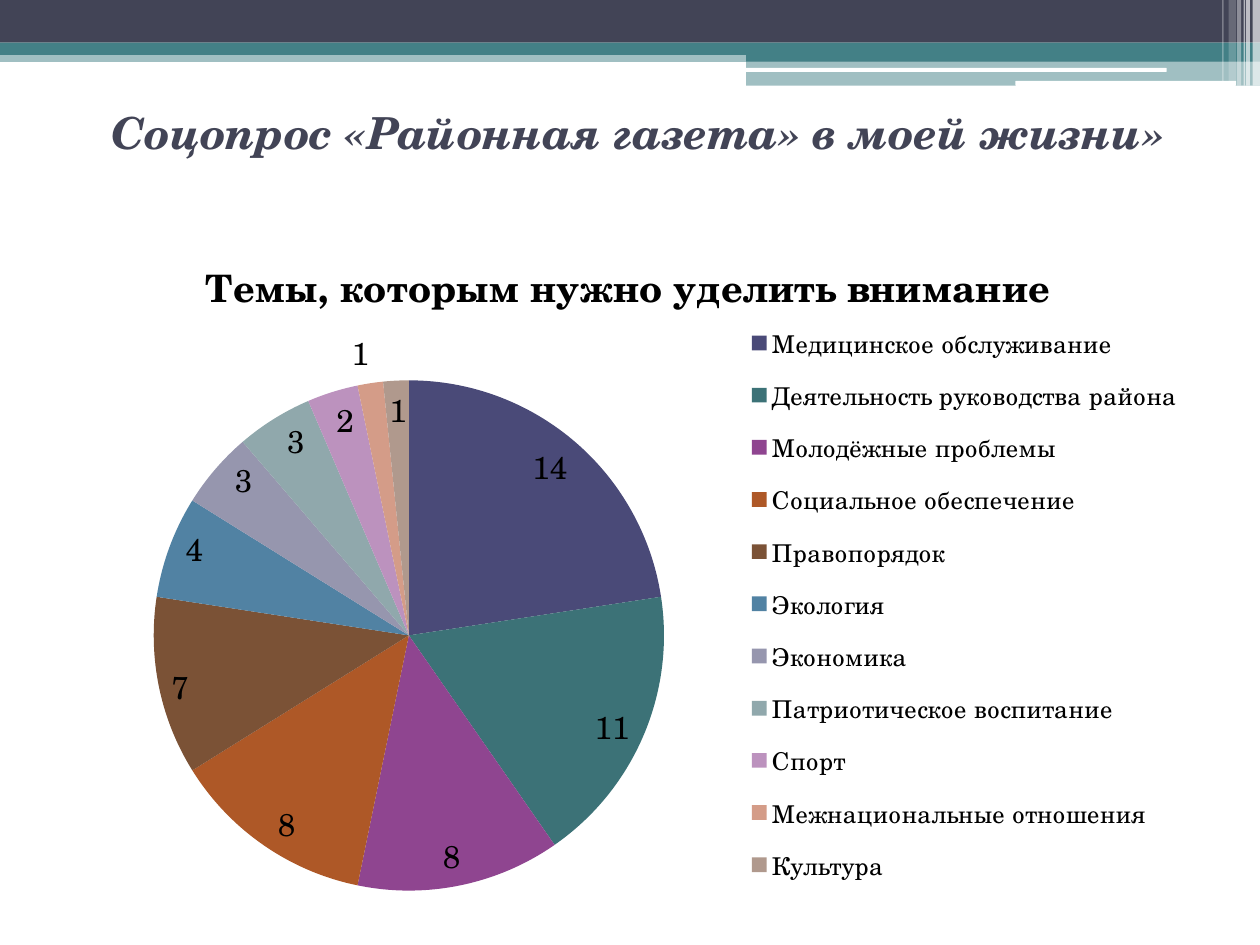
"""Build a survey slide with a pie chart of topics that need attention."""
from lxml import etree
from pptx import Presentation
from pptx.chart.data import CategoryChartData
from pptx.dml.color import RGBColor
from pptx.enum.chart import XL_CHART_TYPE, XL_LABEL_POSITION, XL_LEGEND_POSITION
from pptx.enum.shapes import MSO_SHAPE
from pptx.enum.text import MSO_ANCHOR, PP_ALIGN
from pptx.oxml.ns import qn
from pptx.util import Cm, Pt

PIE = XL_CHART_TYPE.PIE
FIT = XL_LABEL_POSITION.BEST_FIT
RIGHT = XL_LEGEND_POSITION.RIGHT
RECT, ROUND = MSO_SHAPE.RECTANGLE, MSO_SHAPE.ROUNDED_RECTANGLE
TOP, MID = MSO_ANCHOR.TOP, PP_ALIGN.CENTER

THEME = {
    "font": "TeX Gyre Schola",
    "ink": "000000", "navy": "424456", "teal": "438086", "white": "FFFFFF",
    "title": 25.2, "head": 21.6, "label": 18, "legend": 14,
}

TITLE = "Соцопрос «Районная газета» в моей жизни»"
HEAD = "Темы, которым нужно уделить внимание"
TOPICS = [
    ("Медицинское обслуживание", 14, "4A4A78"),
    ("Деятельность руководства района", 11, "3C7277"),
    ("Молодёжные проблемы", 8, "8F4590"),
    ("Социальное обеспечение", 8, "AE5827"),
    ("Правопорядок", 7, "7B5236"),
    ("Экология", 4, "5182A3"),
    ("Экономика", 3, "9696AE"),
    ("Патриотическое воспитание", 3, "90A8AC"),
    ("Спорт", 2, "BC92BE"),
    ("Межнациональные отношения", 1, "D49C88"),
    ("Культура", 1, "B0998D"),
]

WIDE, HIGH = 25.4, 19.05
STEP = 15.04
BANDS = [
    (0, 1.02, WIDE, 0.23, "teal", 50, RECT),
    (0, 0, WIDE, 0.86, "navy", 100, RECT),
    (0, 0.86, WIDE, 0.25, "teal", 100, RECT),
    (STEP, 0.99, WIDE - STEP, 0.25, "teal", 100, RECT),
    (STEP, 1.22, WIDE - STEP, 0.51, "teal", 50, RECT),
    (15.01, 1.37, 8.51, 0.08, "white", 100, ROUND),
    (20.47, 1.63, 4.45, 0.1, "white", 100, ROUND),
]
STRIPES = [
    (25.25, 0.15, 1.73, 65), (25.12, 0.08, 1.73, 65), (25.07, 0.03, 1.73, 60),
    (24.94, 0.08, 1.73, 40), (24.77, 0.15, 1.63, 20), (24.64, 0.03, 1.63, 30),
]


def tint(name):
    return RGBColor.from_string(THEME.get(name, name))


def style(font, size, color="ink", bold=False, italic=False):
    font.name, font.size = THEME["font"], Pt(THEME[size])
    font.bold, font.italic = bold, italic
    font.color.rgb = tint(color)


def write(frame, text, **form):
    para = frame.paragraphs[0]
    para.alignment = MID
    run = para.add_run()
    run.text = text
    style(run.font, **form)
    return para


def band(slide, left, top, wide, high, color, alpha, kind):
    shape = slide.shapes.add_shape(kind, Cm(left), Cm(top), Cm(wide), Cm(high))
    shape.shadow.inherit = False
    shape.line.fill.background()
    shape.fill.solid()
    shape.fill.fore_color.rgb = tint(color)
    if alpha < 100:
        node = shape.fill._xPr.find(".//" + qn("a:srgbClr"))
        etree.SubElement(node, qn("a:alpha")).set("val", str(alpha * 1000))


def place(node, index, inner=False, **spot):
    for old in node.findall(qn("c:layout")):
        node.remove(old)
    layout = etree.Element(qn("c:layout"))
    manual = etree.SubElement(layout, qn("c:manualLayout"))
    rules = {"layoutTarget": "inner"} if inner else {}
    rules.update(xMode="edge", yMode="edge", **spot)
    for name, value in rules.items():
        etree.SubElement(manual, qn("c:" + name)).set("val", str(value))
    node.insert(index, layout)


def head(slide):
    title = slide.shapes.title
    title.left, title.top = Cm(1.27), Cm(2.13)
    title.width, title.height = Cm(22.86), Cm(2.59)
    frame = title.text_frame
    frame.word_wrap = True
    frame.vertical_anchor = TOP
    frame.margin_top = 0
    para = write(frame, TITLE, size="title", color="navy", bold=True, italic=True)
    props = para._p.get_or_add_pPr()
    props.set("marL", str(Cm(1.73)))
    props.set("indent", str(Cm(-1.42)))


def pie(slide):
    data = CategoryChartData()
    data.categories = [name for name, _, _ in TOPICS]
    data.add_series(HEAD, [count for _, count, _ in TOPICS])
    chart = slide.shapes.add_chart(
        PIE, Cm(1.27), Cm(4.11), Cm(22.86), Cm(14.15), data).chart
    style(chart.font, "label")
    chart.has_title = True
    write(chart.chart_title.text_frame, HEAD, size="head", bold=True)
    chart.has_legend = True
    legend = chart.legend
    legend.position, legend.include_in_layout = RIGHT, False
    style(legend.font, "legend")
    plot = chart.plots[0]
    plot.vary_by_categories = True
    plot.has_data_labels = True
    labels = plot.data_labels
    labels.show_value, labels.show_percentage = True, False
    labels.position = FIT
    style(labels.font, "label")
    for index, (_, _, color) in enumerate(TOPICS):
        part = plot.series[0].points[index].format
        part.fill.solid()
        part.fill.fore_color.rgb = tint(color)
        part.line.fill.background()
    area = chart._chartSpace.find(".//" + qn("c:plotArea"))
    place(area, 0, inner=True, x=0.08, y=0.25, w=0.45, h=0.73)
    place(chart.chart_title._element, 1, x=0.12, y=0.06)
    place(legend._element, 1, x=0.6, y=0.15, w=0.39, h=0.84)


def main():
    deck = Presentation()
    deck.slide_width, deck.slide_height = Cm(WIDE), Cm(HIGH)
    slide = deck.slides.add_slide(deck.slide_layouts[5])
    for item in BANDS:
        band(slide, *item)
    for left, wide, high, alpha in STRIPES:
        band(slide, left, 0, wide, high, "white", alpha, RECT)
    pie(slide)
    head(slide)
    deck.save("out.pptx")


if __name__ == "__main__":
    main()
